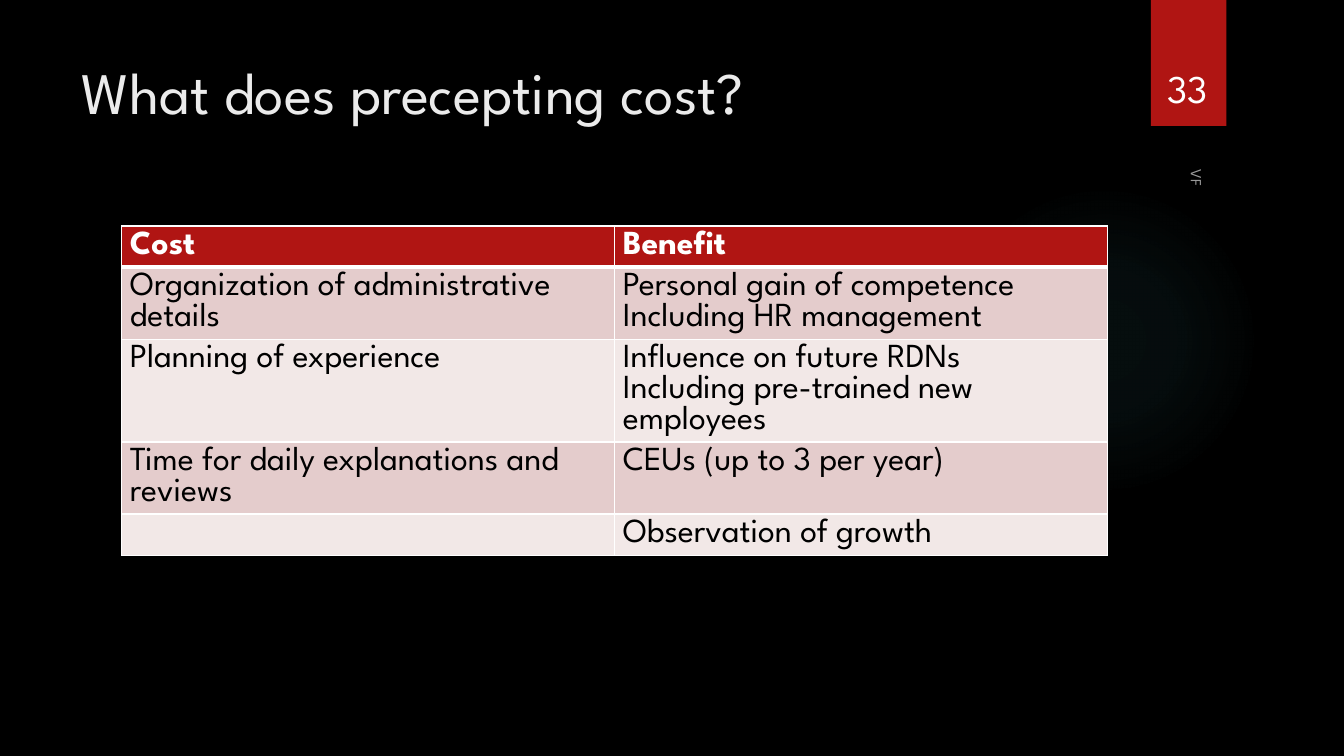
import pptx
import pptx.util
import pptx.dml.color
import pptx.enum.shapes
import pptx.enum.text
import pptx.oxml
import pptx.oxml.ns

COLS, ROWS = 160, 90
WIDE, HIGH = pptx.util.Inches(13.33), pptx.util.Inches(7.5)
FONT = "League Spartan"
HUES = {
    "back": "000000", "red": "B01513", "white": "FFFFFF", "title": "EBEBEB",
    "mark": "999999", "dark": "E4CCCC", "light": "F2E8E7", "glow": "50B9C1",
}
DATA = [
    ("Cost", "Benefit"),
    ("Organization of administrative details",
     "Personal gain of competence\nIncluding HR management"),
    ("Planning of experience",
     "Influence on future RDNs\nIncluding pre-trained new employees"),
    ("Time for daily explanations and reviews", "CEUs (up to 3 per year)"),
    ("", "Observation of growth"),
]
ALIGN = pptx.enum.text.PP_ALIGN
ANCHOR = pptx.enum.text.MSO_ANCHOR
SHAPES = pptx.enum.shapes.MSO_SHAPE


def hue(name):
    return pptx.dml.color.RGBColor.from_string(HUES[name])


def grid(left, top, width, height):
    return (int(left * WIDE / COLS), int(top * HIGH / ROWS),
            int(width * WIDE / COLS), int(height * HIGH / ROWS))


def write(frame, text, size=24, color="white", bold=False,
          align=ALIGN.LEFT, anchor=ANCHOR.TOP):
    frame.word_wrap = True
    frame.vertical_anchor = anchor
    for index, line in enumerate(text.split("\n")):
        para = frame.add_paragraph() if index else frame.paragraphs[0]
        para.alignment = align
        font = para.font
        if line:
            run = para.add_run()
            run.text = line
            font = run.font
        font.name = FONT
        font.size = pptx.util.Pt(size)
        font.bold = bold
        font.color.rgb = hue(color)


def label(slide, place, text, turn=0, **style):
    box = slide.shapes.add_textbox(*grid(*place))
    box.rotation = turn
    write(box.text_frame, text, **style)


def block(slide, kind, place, color):
    shape = slide.shapes.add_shape(kind, *grid(*place))
    shape.shadow.inherit = False
    shape.line.fill.background()
    shape.fill.solid()
    shape.fill.fore_color.rgb = hue(color)
    return shape


def glow(slide, place):
    shape = block(slide, SHAPES.OVAL, place, "glow")
    stops = "".join(
        f'<a:gs pos="{spot * 1000}"><a:srgbClr val="{HUES["glow"]}">'
        f'<a:alpha val="{alpha * 1000}"/></a:srgbClr></a:gs>'
        for spot, alpha in ((0, 7), (36, 6), (69, 0), (100, 0)))
    blend = pptx.oxml.parse_xml(
        f'<a:gradFill {pptx.oxml.ns.nsdecls("a")}><a:gsLst>{stops}</a:gsLst>'
        '<a:path path="circle"><a:fillToRect l="50000" t="50000" '
        'r="50000" b="50000"/></a:path></a:gradFill>')
    props = shape.element.spPr
    props.replace(props.find(pptx.oxml.ns.qn("a:solidFill")), blend)


def border(cell, **sides):
    props = cell._tc.get_or_add_tcPr()
    for side in "LRTB":
        width = pptx.util.Pt(sides.get(side, 1))
        props.append(pptx.oxml.parse_xml(
            f'<a:ln{side} {pptx.oxml.ns.nsdecls("a")} w="{width}"><a:solidFill>'
            f'<a:srgbClr val="{HUES["white"]}"/></a:solidFill></a:ln{side}>'))


def table(slide, place, data):
    grid_box = slide.shapes.add_table(len(data), len(data[0]), *grid(*place))
    for r, line in enumerate(data):
        for c, text in enumerate(line):
            cell = grid_box.table.cell(r, c)
            head = r == 0
            cell.margin_left = cell.margin_right = pptx.util.Inches(0.08)
            cell.margin_top = cell.margin_bottom = pptx.util.Inches(0.05)
            border(cell, T=3 if r == 1 else 1, B=3 if head else 1)
            cell.fill.solid()
            cell.fill.fore_color.rgb = hue(
                "red" if head else "dark" if r % 2 else "light")
            write(cell.text_frame, text, bold=head,
                  color="white" if head else "back")


def title(slide, place, text, **style):
    shape = slide.shapes.title
    shape.left, shape.top, shape.width, shape.height = grid(*place)
    shape.text_frame.auto_size = pptx.enum.text.MSO_AUTO_SIZE.NONE
    write(shape.text_frame, text, **style)


def main():
    deck = pptx.Presentation()
    deck.slide_width, deck.slide_height = WIDE, HIGH
    slide = deck.slides.add_slide(deck.slide_layouts[5])
    slide.background.fill.solid()
    slide.background.fill.fore_color.rgb = hue("back")
    glow(slide, (112.92, 22, 37, 37))
    block(slide, SHAPES.RECTANGLE, (137, 0, 9, 15), "red")
    title(slide, (8.5, 6, 123.5, 18.36), "What does precepting cost?",
          size=42, color="title")
    table(slide, (14.5, 26.9, 117.4, 24.6), DATA)
    label(slide, (117.5, 42.36, 50.64, 4), "VF", turn=90,
          size=11, color="mark", anchor=ANCHOR.BOTTOM)
    label(slide, (135.84, 3.84, 11, 10), "33",
          size=28, align=ALIGN.CENTER, anchor=ANCHOR.BOTTOM)
    deck.save("out.pptx")


if __name__ == "__main__":
    main()
